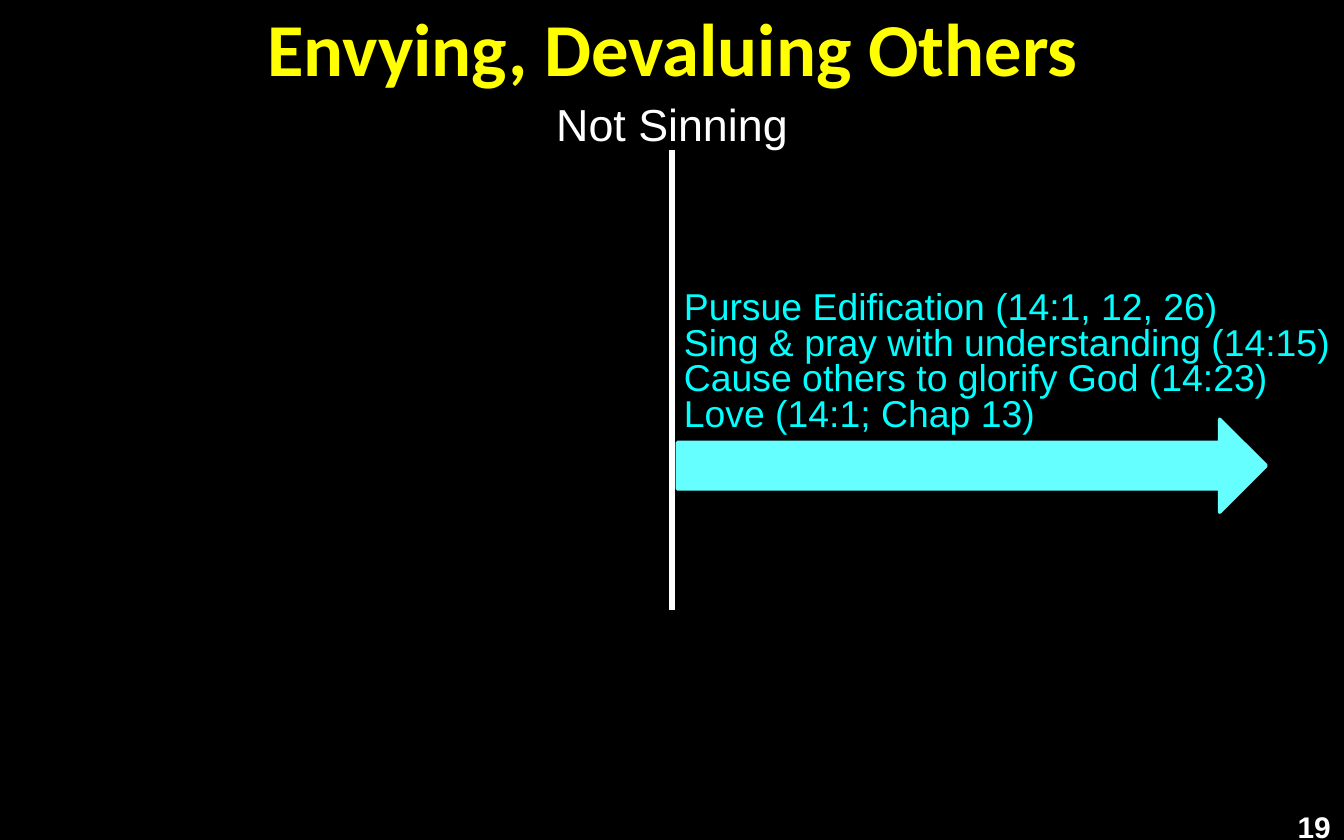
from lxml.etree import SubElement
from pptx import Presentation
from pptx.dml.color import RGBColor
from pptx.enum.shapes import MSO_CONNECTOR, MSO_SHAPE
from pptx.enum.text import MSO_ANCHOR, PP_ALIGN
from pptx.oxml.ns import qn
from pptx.util import Inches, Pt

BLACK = RGBColor(0x00, 0x00, 0x00)
WHITE = RGBColor(0xFF, 0xFF, 0xFF)
YELLOW = RGBColor(0xFF, 0xFF, 0x00)
CYAN = RGBColor(0x00, 0xFF, 0xFF)
LIGHT_CYAN = RGBColor(0x66, 0xFF, 0xFF)


class Deck:
    """Holds the text style and the current slide."""

    font = {"name": "Arial", "size": Pt(20), "bold": False}

    def __init__(self, slide):
        self.s = slide

    def text(self, box, lines, color, align=PP_ALIGN.LEFT, spacing=1.0,
             anchor=MSO_ANCHOR.TOP, wrap=True, **font):
        tf = self.s.shapes.add_textbox(*map(Inches, box)).text_frame
        tf.word_wrap = wrap
        tf.vertical_anchor = anchor
        for i, line in enumerate(lines):
            p = tf.add_paragraph() if i else tf.paragraphs[0]
            p.text = line
            p.alignment = align
            p.line_spacing = spacing
            for r in p.runs:
                for key, value in {**self.font, **font}.items():
                    setattr(r.font, key, value)
                r.font.color.rgb = color

    def line(self, start, end, color, width):
        ln = self.s.shapes.add_connector(
            MSO_CONNECTOR.STRAIGHT, *map(Inches, start + end))
        ln.line.color.rgb = color
        ln.line.width = Pt(width)
        SubElement(ln._element.spPr, qn("a:effectLst"))

    def shape(self, kind, box, color, width=0):
        sp = self.s.shapes.add_shape(kind, *map(Inches, box))
        sp.shadow.inherit = False
        sp.fill.solid()
        sp.fill.fore_color.rgb = color
        if width:
            sp.line.color.rgb = color
            sp.line.width = Pt(width)
        else:
            sp.line.fill.background()


def main():
    prs = Presentation()
    prs.slide_width, prs.slide_height = Inches(10), Inches(6.25)
    deck = Deck(prs.slides.add_slide(prs.slide_layouts[6]))

    # Black backdrop
    deck.shape(MSO_SHAPE.RECTANGLE, (0, 0, 10, 6.25), BLACK)

    # Title and page number
    deck.text((0.09, 0.07, 9.83, 0.56), ["Envying, Devaluing Others"], YELLOW,
              PP_ALIGN.CENTER, anchor=MSO_ANCHOR.MIDDLE,
              name="Calibri", size=Pt(40), bold=True)
    deck.text((9.5, 5.97, 0.5, 0.28), ["19"], WHITE, PP_ALIGN.RIGHT,
              size=Pt(16), bold=True)

    # Dividing line with its label
    deck.line((5, 1.12), (5, 4.54), WHITE, 3)
    deck.text((4.03, 0.67, 1.94, 0.5), ["Not Sinning"], WHITE,
              PP_ALIGN.CENTER, wrap=False, size=Pt(24))

    # Positive side: actions above the arrow
    deck.text((4.99, 2.12, 5.1, 1.18), [
        "Pursue Edification (14:1, 12, 26)",
        "Sing & pray with understanding (14:15)",
        "Cause others to glorify God (14:23)\vLove (14:1; Chap 13)",
    ], CYAN, spacing=0.8)
    deck.shape(MSO_SHAPE.RIGHT_ARROW, (5.04, 3.12, 4.38, 0.69), LIGHT_CYAN, 2)

    prs.save("out.pptx")


if __name__ == "__main__":
    main()
